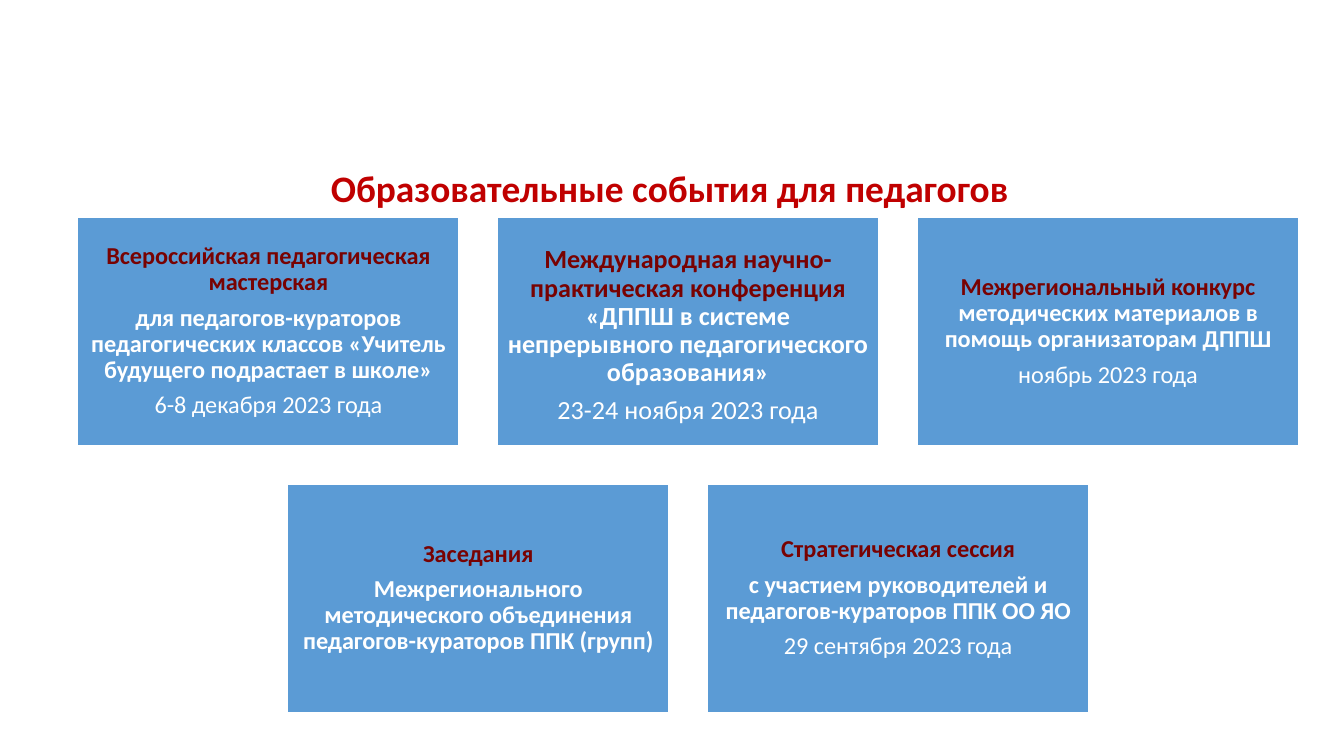
from pptx import Presentation
from pptx.dml.color import RGBColor
from pptx.enum import shapes, text
from pptx.util import Pt

RED = RGBColor(0xC0, 0x00, 0x00)
MAROON = RGBColor(0x78, 0x02, 0x02)
BLUE = RGBColor(0x5B, 0x9B, 0xD5)
WHITE = RGBColor(0xFF, 0xFF, 0xFF)
FONT = "Calibri"

COLUMNS = 3
GAP = 20.4

# Each event: font size, top inset, paragraphs; each run is (text, colour, bold)
EVENTS = [
    (13, 3.6, [
        [("Всероссийская педагогическая мастерская", MAROON, True)],
        [("для педагогов-кураторов педагогических классов «Учитель будущего "
          "подрастает в школе»", WHITE, True)],
        [("6-8 декабря 2023 года", WHITE, False)]]),
    (14, 8, [
        [("Международная научно-практическая конференция ", MAROON, True),
         ("«ДППШ в системе непрерывного педагогического образования»", WHITE, True)],
        [("23-24 ноября 2023 года", WHITE, False)]]),
    (13, 3.6, [
        [("Межрегиональный конкурс ", MAROON, True),
         ("методических материалов в помощь организаторам ДППШ", WHITE, True)],
        [("ноябрь 2023 года", WHITE, False)]]),
    (13, 3.6, [
        [("Заседания", MAROON, True)],
        [("Межрегионального методического объединения педагогов-кураторов "
          "ППК (групп)", WHITE, True)]]),
    (13, 3.6, [
        [("Стратегическая сессия", MAROON, True)],
        [("с участием руководителей и педагогов-кураторов ППК ОО ЯО", WHITE, True)],
        [("29 сентября 2023 года", WHITE, False)]]),
]


def style_run(r, size, color, bold):
    r.font.name = FONT
    r.font.size = Pt(size)
    r.font.bold = bold
    r.font.color.rgb = color


def add_title(slide, left, top, width, height):
    sp = slide.shapes.title
    sp.left, sp.top, sp.width, sp.height = Pt(left), Pt(top), Pt(width), Pt(height)
    tf = sp.text_frame
    tf.text = "Образовательные события для педагогов"
    tf.word_wrap = True
    tf.auto_size = text.MSO_AUTO_SIZE.NONE
    tf.vertical_anchor = text.MSO_ANCHOR.TOP
    p = tf.paragraphs[0]
    p.alignment = text.PP_ALIGN.LEFT
    p.line_spacing = 1.0
    style_run(p.runs[0], 20, RED, True)


def add_card(slide, event, left, top, width, height):
    size, top_inset, paragraphs = event
    sp = slide.shapes.add_shape(shapes.MSO_SHAPE.RECTANGLE,
                                Pt(left), Pt(top), Pt(width), Pt(height))
    sp.shadow.inherit = False
    sp.fill.solid()
    sp.fill.fore_color.rgb = BLUE
    sp.line.color.rgb = WHITE
    sp.line.width = Pt(1)
    tf = sp.text_frame
    tf.word_wrap = True
    tf.vertical_anchor = text.MSO_ANCHOR.MIDDLE
    tf.margin_left = tf.margin_right = tf.margin_bottom = Pt(3.6)
    tf.margin_top = Pt(top_inset)
    for i, runs in enumerate(paragraphs):
        p = tf.add_paragraph() if i else tf.paragraphs[0]
        p.alignment = text.PP_ALIGN.CENTER
        p.line_spacing = 0.9
        if i:
            p.space_before = Pt(4.8)
        for content, color, bold in runs:
            r = p.add_run()
            r.text = content
            style_run(r, size, color, bold)


def add_cards(slide, left, top, width, height):
    """Fill the box with rows of equal cards, each row centred."""
    rows = [EVENTS[i:i + COLUMNS] for i in range(0, len(EVENTS), COLUMNS)]
    card_w = (width - GAP * (COLUMNS - 1)) / COLUMNS
    card_h = (height - GAP * (len(rows) - 1)) / len(rows)
    for i, row in enumerate(rows):
        indent = (COLUMNS - len(row)) * (card_w + GAP) / 2
        for j, event in enumerate(row):
            add_card(slide, event, left + indent + j * (card_w + GAP),
                     top + i * (card_h + GAP), card_w, card_h)


def main():
    prs = Presentation()
    prs.slide_width, prs.slide_height = Pt(720), Pt(405)
    slide = prs.slides.add_slide(prs.slide_layouts[5])  # Title Only
    add_title(slide, 170, 85, 512.6, 31.5)
    add_cards(slide, 41.5, 116.2, 654.3, 265.6)
    prs.save("out.pptx")


if __name__ == "__main__":
    main()
